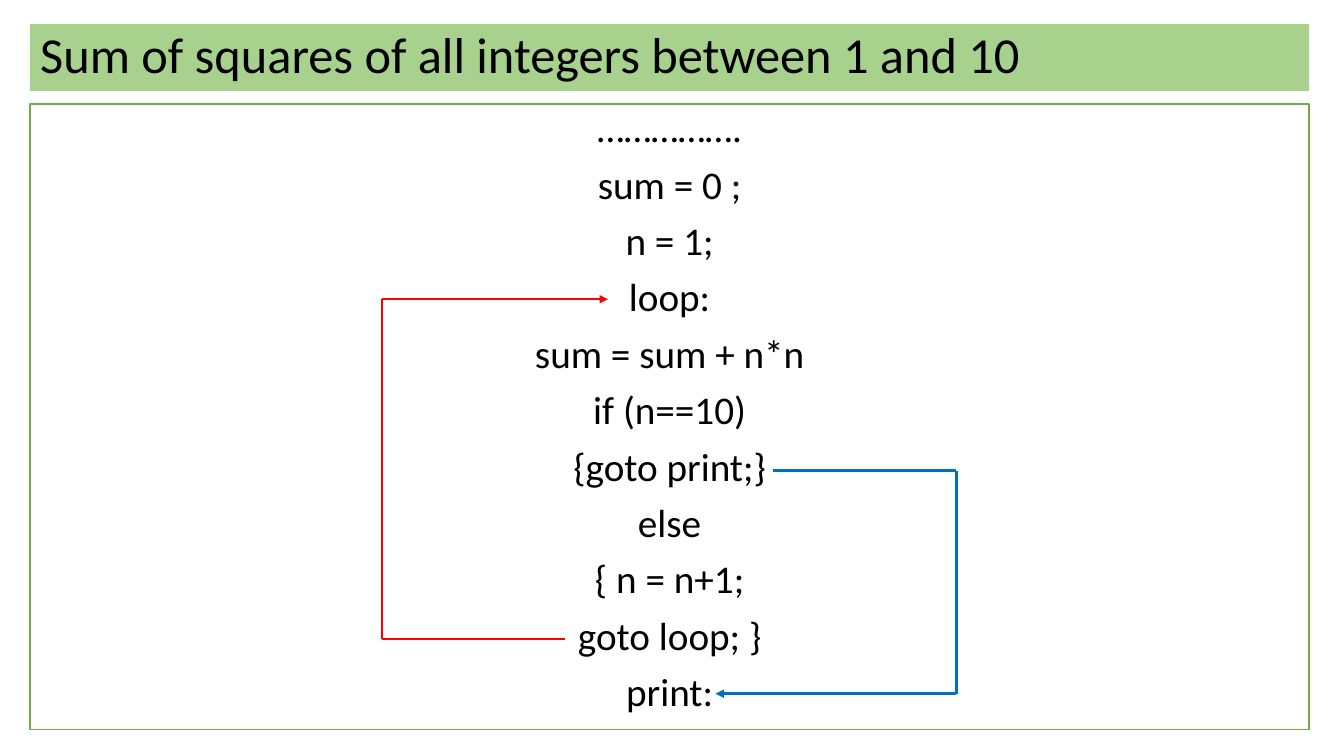
import itertools

import pptx
import pptx.dml.color
import pptx.enum.shapes
import pptx.enum.text
import pptx.oxml
import pptx.oxml.ns
import pptx.util
from pptx.util import Cm

COLOURS = {
    "text": "000000",
    "title fill": "A9D18E",
    "body fill": "FFFFFF",
    "body line": "70AD47",
    "loop jump": "FF0000",
    "print jump": "0070C0",
}
LEFT, WIDTH = Cm(0.76), Cm(32.23)

TITLE = "Sum of squares of all integers between 1 and 10"
CODE = [
    "…………….",
    "sum = 0 ;",
    "n = 1;",
    "loop:",
    "sum = sum + n*n",
    "if (n==10)",
    "{goto print;}",
    "else",
    "{ n = n+1;",
    "goto loop; }",
    "print:",
]


def colour(name):
    return pptx.dml.color.RGBColor.from_string(COLOURS[name])


def apply_format(target, values):
    for name, value in values.items():
        setattr(target, name, value)


def add_drawing_element(parent, tag, **attributes):
    element = pptx.oxml.parse_xml(f"<a:{tag} {pptx.oxml.ns.nsdecls('a')}/>")
    for name, value in attributes.items():
        element.set(name, value)
    parent.append(element)


def fill_placeholder(shape, top, height, fill, lines, size, paragraph_format, anchor):
    apply_format(shape, {"left": LEFT, "top": top, "width": WIDTH, "height": height})
    shape.fill.solid()
    shape.fill.fore_color.rgb = colour(fill)
    frame = shape.text_frame
    frame.text = "\n".join(lines)
    apply_format(frame, {
        "word_wrap": True,
        "auto_size": pptx.enum.text.MSO_AUTO_SIZE.NONE,
        "vertical_anchor": anchor,
    })
    for paragraph in frame.paragraphs:
        apply_format(paragraph, {"line_spacing": 0.9, **paragraph_format})
        font = paragraph.runs[0].font
        apply_format(font, {"name": "Calibri", "size": pptx.util.Pt(size)})
        font.color.rgb = colour("text")


def remove_bullet(paragraph):
    properties = paragraph._p.get_or_add_pPr()
    properties.set("marL", "0")
    properties.set("indent", "0")
    add_drawing_element(properties, "buNone")


def add_line(slide, start, end, line_colour):
    connector = slide.shapes.add_connector(
        pptx.enum.shapes.MSO_CONNECTOR.STRAIGHT, *start, *end)
    connector.line.color.rgb = colour(line_colour)
    connector.line.width = pptx.util.Pt(1.75)
    add_drawing_element(connector._element.spPr, "effectLst")
    return connector


def add_jump(slide, start_x, start_y, side_x, end_x, end_y, line_colour):
    """Three lines from a goto, along one side, to its label."""
    points = [(start_x, start_y), (side_x, start_y), (side_x, end_y), (end_x, end_y)]
    points = [(Cm(x), Cm(y)) for x, y in points]
    for start, end in itertools.pairwise(points):
        connector = add_line(slide, start, end, line_colour)
    add_drawing_element(connector.line._get_or_add_ln(), "tailEnd", type="triangle")


def main():
    presentation = pptx.Presentation()
    apply_format(presentation, {"slide_width": Cm(33.87), "slide_height": Cm(19.05)})
    slide = presentation.slides.add_slide(presentation.slide_layouts[1])
    title, body = slide.placeholders
    align = pptx.enum.text.PP_ALIGN
    anchor = pptx.enum.text.MSO_ANCHOR

    # Title bar
    fill_placeholder(title, Cm(0.61), Cm(1.68), "title fill", [TITLE], 36,
                     {"alignment": align.LEFT}, anchor.MIDDLE)

    # Framed code listing
    fill_placeholder(body, Cm(2.62), Cm(15.77), "body fill", CODE, 28,
                     {"alignment": align.CENTER, "space_before": pptx.util.Pt(10)},
                     anchor.TOP)
    body.line.color.rgb = colour("body line")
    body.line.width = pptx.util.Pt(1)
    for paragraph in body.text_frame.paragraphs:
        remove_bullet(paragraph)

    # Jumps from each goto to its label
    add_jump(slide, 14.25, 16.1, 9.63, 15.32, 7.54, "loop jump")
    add_jump(slide, 19.48, 11.86, 24.1, 18.03, 17.48, "print jump")

    presentation.save("out.pptx")


if __name__ == "__main__":
    main()
